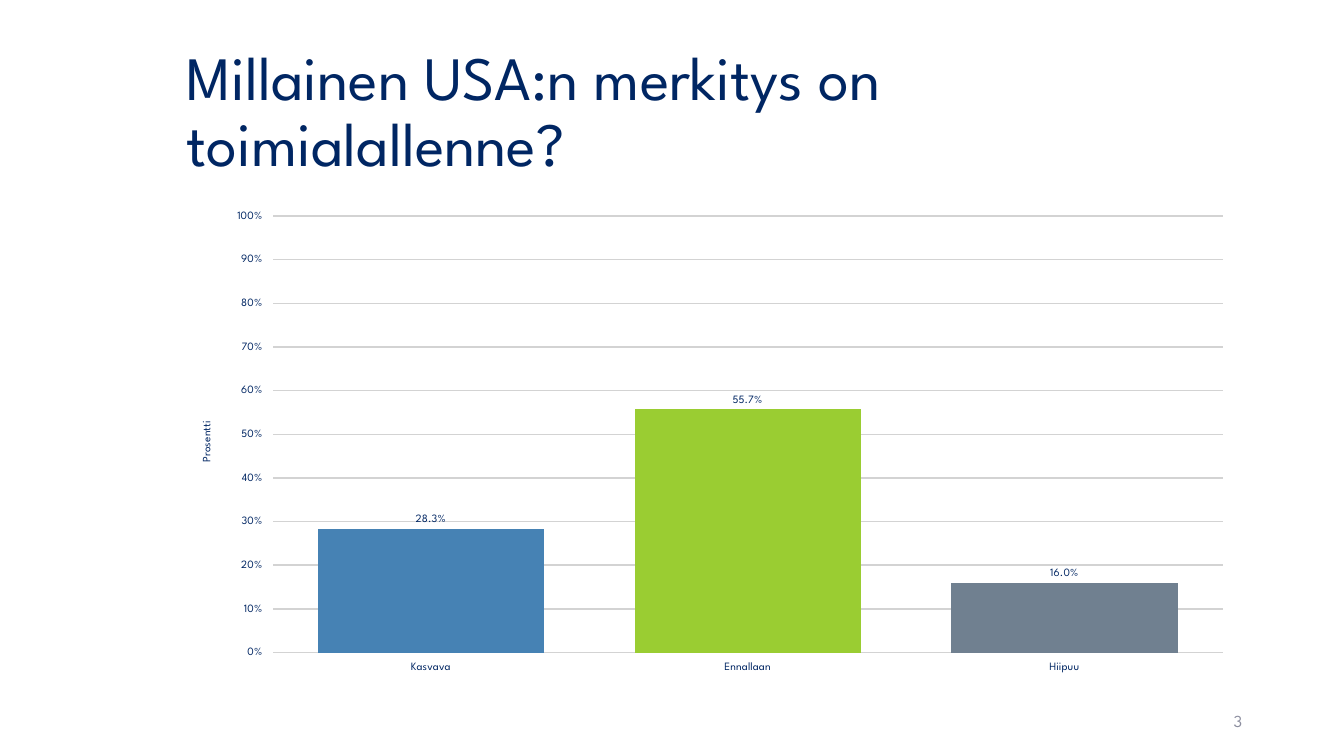
from dataclasses import dataclass

from lxml.etree import SubElement
from pptx import Presentation
from pptx.chart.chart import Chart
from pptx.chart.data import CategoryChartData
from pptx.dml.color import RGBColor
from pptx.enum.chart import XL_CHART_TYPE as ChartType, XL_LABEL_POSITION as LabelPosition
from pptx.enum.chart import XL_TICK_MARK as TickMark
from pptx.enum.text import MSO_ANCHOR as Anchor, PP_ALIGN as Align
from pptx.oxml.ns import qn
from pptx.slide import Slide
from pptx.text.text import Font
from pptx.util import Inches, Pt


@dataclass(frozen=True)
class Theme:
    font: str = "League Spartan"
    navy: str = "002663"
    muted: str = "8C8E9F"
    grid: str = "D3D3D3"
    title_size: int = 44
    number_size: int = 12
    chart_size: int = 18
    label_size: int = 8


@dataclass(frozen=True)
class Answer:
    label: str
    share: float
    color: str


THEME = Theme()
ANSWERS = [
    Answer("Kasvava", 0.283, "4682B4"),
    Answer("Ennallaan", 0.557, "9ACD32"),
    Answer("Hiipuu", 0.16, "708090"),
]
PLOT_AREA = {"x": 0.09, "y": 0.03, "w": 0.89, "h": 0.91}


def style_font(font: Font, size: int, color: str = THEME.navy) -> None:
    font.name = THEME.font
    font.size = Pt(size)
    font.bold = False
    font.color.rgb = RGBColor.from_string(color)


def add_title(slide: Slide, question: str) -> None:
    title = slide.shapes.title
    title.left, title.top = Inches(1.75), Inches(0.4)
    title.width, title.height = Inches(10.59), Inches(1.45)
    frame = title.text_frame
    frame.text = question
    frame.word_wrap = True
    frame.vertical_anchor = Anchor.MIDDLE
    paragraph = frame.paragraphs[0]
    paragraph.alignment = Align.LEFT
    paragraph.line_spacing = 0.9
    style_font(paragraph.runs[0].font, THEME.title_size)


def add_page_number(slide: Slide, number: str) -> None:
    box = slide.shapes.add_textbox(Inches(9.42), Inches(6.95), Inches(3), Inches(0.4))
    frame = box.text_frame
    frame.text = number
    frame.word_wrap = True
    frame.vertical_anchor = Anchor.MIDDLE
    paragraph = frame.paragraphs[0]
    paragraph.alignment = Align.RIGHT
    paragraph.space_after = Pt(6)
    style_font(paragraph.runs[0].font, THEME.number_size, THEME.muted)


def place_plot_area(chart: Chart) -> None:
    plot_area = chart.element.find(".//" + qn("c:plotArea"))
    layout = plot_area.find(qn("c:layout"))
    if layout is None:
        layout = SubElement(plot_area, qn("c:layout"))
        plot_area.insert(0, layout)
    manual = SubElement(layout, qn("c:manualLayout"))
    settings = {"layoutTarget": "inner", "xMode": "edge", "yMode": "edge"}
    for tag, value in {**settings, **PLOT_AREA}.items():
        SubElement(manual, qn(f"c:{tag}")).set("val", str(value))


def style_axes(chart: Chart) -> None:
    for axis in (chart.category_axis, chart.value_axis):
        axis.major_tick_mark = TickMark.OUTSIDE
        axis.minor_tick_mark = TickMark.NONE
        axis.format.line.fill.background()
        style_font(axis.tick_labels.font, THEME.label_size)

    percent_axis = chart.value_axis
    percent_axis.minimum_scale, percent_axis.maximum_scale = 0, 1
    percent_axis.major_unit = 0.1
    percent_axis.tick_labels.number_format = "0%"
    percent_axis.tick_labels.number_format_is_linked = False
    grid_line = percent_axis.major_gridlines.format.line
    grid_line.color.rgb = RGBColor.from_string(THEME.grid)
    grid_line.width = Pt(1)
    caption = percent_axis.axis_title.text_frame
    caption.text = "Prosentti"
    style_font(caption.paragraphs[0].runs[0].font, THEME.label_size)


def add_answer_chart(slide: Slide, answers: list[Answer]) -> None:
    data = CategoryChartData(number_format="0.0%")
    data.categories = [answer.label for answer in answers]
    data.add_series("Series 1", [answer.share for answer in answers])
    chart = slide.shapes.add_chart(
        ChartType.COLUMN_CLUSTERED,
        Inches(1.75), Inches(2), Inches(10.59), Inches(4.76), data,
    ).chart
    chart.has_legend = False
    chart.has_title = False
    style_font(chart.font, THEME.chart_size)
    place_plot_area(chart)
    style_axes(chart)

    # Columns, one colour per answer
    plot = chart.plots[0]
    plot.gap_width, plot.overlap = 40, -2
    plot.vary_by_categories = False
    series = plot.series[0]
    for index, answer in enumerate(answers):
        fill = series.points[index].format.fill
        fill.solid()
        fill.fore_color.rgb = RGBColor.from_string(answer.color)

    # Share above each column
    labels = series.data_labels
    labels.show_value = True
    labels.number_format = "0.0%"
    labels.number_format_is_linked = False
    labels.position = LabelPosition.OUTSIDE_END
    style_font(labels.font, THEME.label_size)


def main() -> None:
    deck = Presentation()
    deck.slide_width, deck.slide_height = Inches(13.33), Inches(7.5)
    slide = deck.slides.add_slide(deck.slide_layouts[5])
    add_title(slide, "Millainen USA:n merkitys on toimialallenne?")
    add_page_number(slide, "3")
    add_answer_chart(slide, ANSWERS)
    deck.save("out.pptx")


if __name__ == "__main__":
    main()
